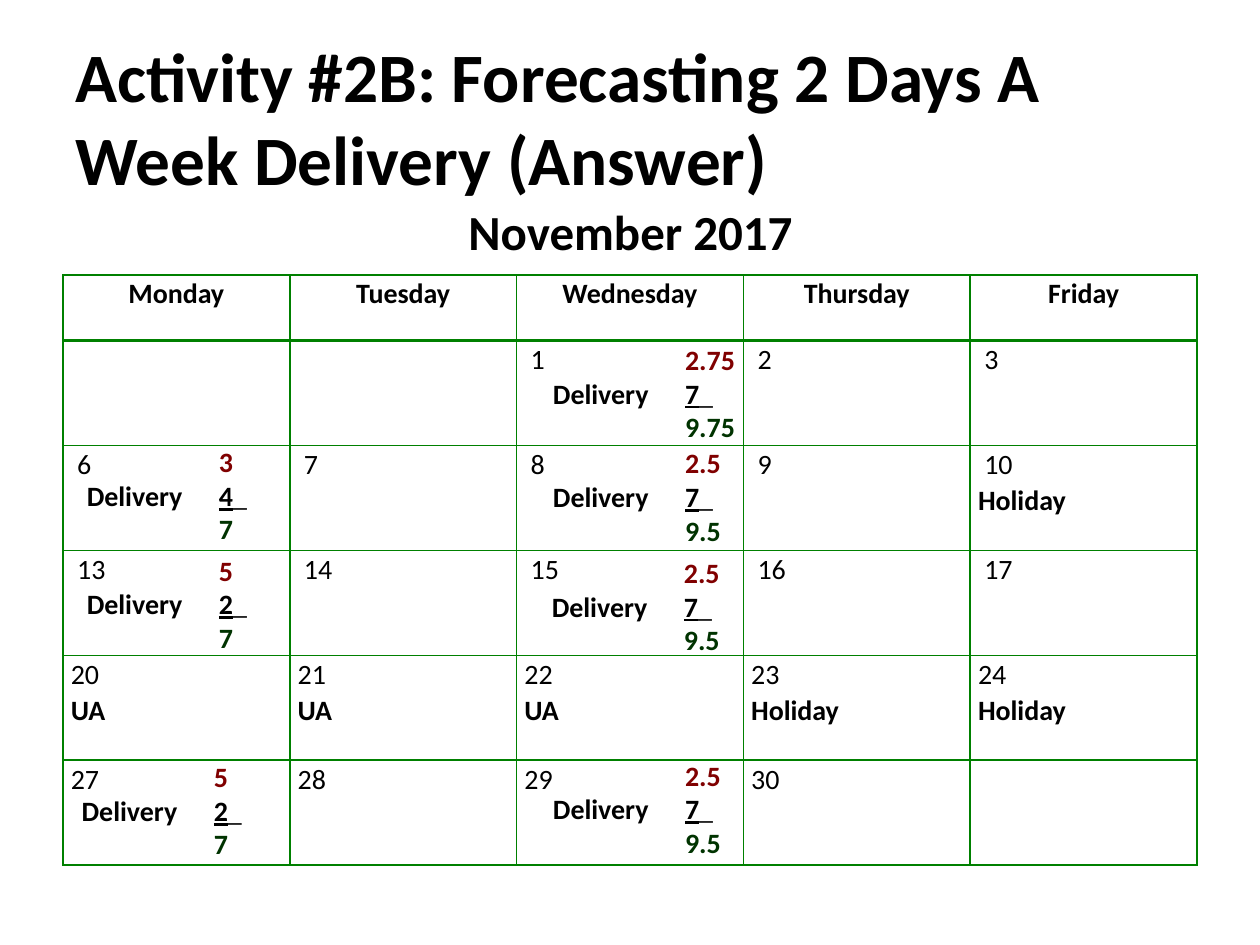
from dataclasses import dataclass

from lxml import etree
from pptx import Presentation
from pptx import util as u
from pptx.dml.color import RGBColor
from pptx.enum import text
from pptx.oxml.ns import qn


@dataclass(frozen=True)
class Theme:
    font: str = "Calibri"
    ink: str = "000000"
    grid: str = "008000"
    opening: str = "800000"
    total: str = "003300"
    title: float = 39.6
    month: float = 28
    body: float = 16


@dataclass(frozen=True)
class Delivery:
    left: float
    top: float
    opening: str
    added: str
    total: str
    width: float = 128.9


THEME = Theme()
DAYS = ["Monday", "Tuesday", "Wednesday", "Thursday", "Friday"]
LABELS = {10: "Holiday", 20: "UA", 21: "UA", 22: "UA", 23: "Holiday", 24: "Holiday"}
FIRST_MONDAY, LAST_DATE, WEEKS = -1, 30, 5
LAST_INDENTED_DATE, DATE_INDENT = 17, 3.6
COLUMN_WIDTH, HEADER_HEIGHT, WEEK_HEIGHT = 129.6, 37.5, 60
DELIVERY_HEIGHT, NUMBER_TAB = 65.5, 75.5

DELIVERIES = [
    Delivery(308.9, 192.2, "2.75", "7", "9.75", 121.7),
    Delivery(42.5, 250.6, "3", "4", "7"),
    Delivery(308.9, 251.3, "2.5", "7", "9.5"),
    Delivery(42.5, 312.5, "5", "2", "7"),
    Delivery(308.2, 313.9, "2.5", "7", "9.5"),
    Delivery(39.6, 430.6, "5", "2", "7"),
    Delivery(308.9, 429.8, "2.5", "7", "9.5"),
]


def style(paragraph, size: float, bold: bool = True, color: str = THEME.ink) -> None:
    font = paragraph.font
    font.name, font.size, font.bold = THEME.font, u.Pt(size), bold
    font.color.rgb = RGBColor.from_string(color)


def add_box(page, left: float, top: float, width: float, height: float):
    box = page.shapes.add_textbox(*map(u.Pt, (left, top, width, height)))
    box.text_frame.word_wrap = True
    return box.text_frame


def set_borders(cell, top: float, bottom: float) -> None:
    properties = cell._tc.get_or_add_tcPr()
    for side, width in (("L", 1), ("R", 1), ("T", top), ("B", bottom)):
        line = etree.SubElement(properties, qn(f"a:ln{side}"), w=str(u.Pt(width)))
        fill = etree.SubElement(line, qn("a:solidFill"))
        etree.SubElement(fill, qn("a:srgbClr"), val=THEME.grid)


def write_date(frame, date: int) -> None:
    paragraph = frame.paragraphs[0]
    paragraph.text = str(date)
    paragraph.line_spacing = 1.07
    if date <= LAST_INDENTED_DATE:
        properties = paragraph._p.get_or_add_pPr()
        properties.set("marL", str(u.Pt(DATE_INDENT)))
        properties.set("indent", "0")
    style(paragraph, THEME.body, bold=False)
    if date in LABELS:
        label = frame.add_paragraph()
        label.text = LABELS[date]
        label.line_spacing = 1.07
        style(label, THEME.body)


def add_calendar(page) -> None:
    height = HEADER_HEIGHT + WEEKS * WEEK_HEIGHT
    table = page.shapes.add_table(
        WEEKS + 1, len(DAYS), u.Pt(36), u.Pt(157),
        u.Pt(COLUMN_WIDTH * len(DAYS)), u.Pt(height)).table
    table.first_row = table.horz_banding = False
    for column in table.columns:
        column.width = u.Pt(COLUMN_WIDTH)
    for index, row in enumerate(table.rows):
        row.height = u.Pt(WEEK_HEIGHT if index else HEADER_HEIGHT)
        for weekday, cell in enumerate(row.cells):
            set_borders(cell, 2 if index == 1 else 1, 1 if index else 2)
            cell.fill.background()
            cell.margin_left = cell.margin_right = u.Pt(4.5)
            cell.margin_top = cell.margin_bottom = 0
            date = FIRST_MONDAY + 7 * (index - 1) + weekday
            paragraph = cell.text_frame.paragraphs[0]
            if index == 0:
                paragraph.text = DAYS[weekday]
                paragraph.alignment = text.PP_ALIGN.CENTER
                paragraph.line_spacing = 1.07
                style(paragraph, THEME.body)
            elif 1 <= date <= LAST_DATE:
                write_date(cell.text_frame, date)
            else:
                style(paragraph, THEME.body)


def add_delivery(page, delivery: Delivery) -> None:
    frame = add_box(page, delivery.left, delivery.top, delivery.width, DELIVERY_HEIGHT)
    frame.auto_size = text.MSO_AUTO_SIZE.SHAPE_TO_FIT_TEXT
    lines = [
        (f"\t{delivery.opening}", THEME.opening),
        ("Delivery\t", THEME.ink),
        (f"\t{delivery.total}", THEME.total),
    ]
    for index, (words, color) in enumerate(lines):
        paragraph = frame.add_paragraph() if index else frame.paragraphs[0]
        tabs = etree.SubElement(paragraph._p.get_or_add_pPr(), qn("a:tabLst"))
        etree.SubElement(tabs, qn("a:tab"), pos=str(u.Pt(NUMBER_TAB)), algn="l")
        style(paragraph, THEME.body, color=color)
        paragraph.add_run().text = words
    added = frame.paragraphs[1].add_run()
    added.text = delivery.added
    added.font.underline = True
    rule = frame.paragraphs[1].add_run()
    rule.text = "_"
    rule.font.bold = False


def main() -> None:
    deck = Presentation()
    deck.slide_width, deck.slide_height = u.Pt(720), u.Pt(540)
    page = deck.slides.add_slide(deck.slide_layouts[6])

    title = add_box(page, 36, 21.6, 648, 90)
    title.vertical_anchor = text.MSO_ANCHOR.MIDDLE
    title.text = "Activity #2B: Forecasting 2 Days A Week Delivery (Answer)"
    style(title.paragraphs[0], THEME.title)

    add_calendar(page)

    month = add_box(page, 145.4, 111.6, 429.8, 41)
    month.auto_size = text.MSO_AUTO_SIZE.SHAPE_TO_FIT_TEXT
    month.text = "November 2017"
    month.paragraphs[0].alignment = text.PP_ALIGN.CENTER
    style(month.paragraphs[0], THEME.month)

    for delivery in DELIVERIES:
        add_delivery(page, delivery)
    deck.save("out.pptx")


if __name__ == "__main__":
    main()
